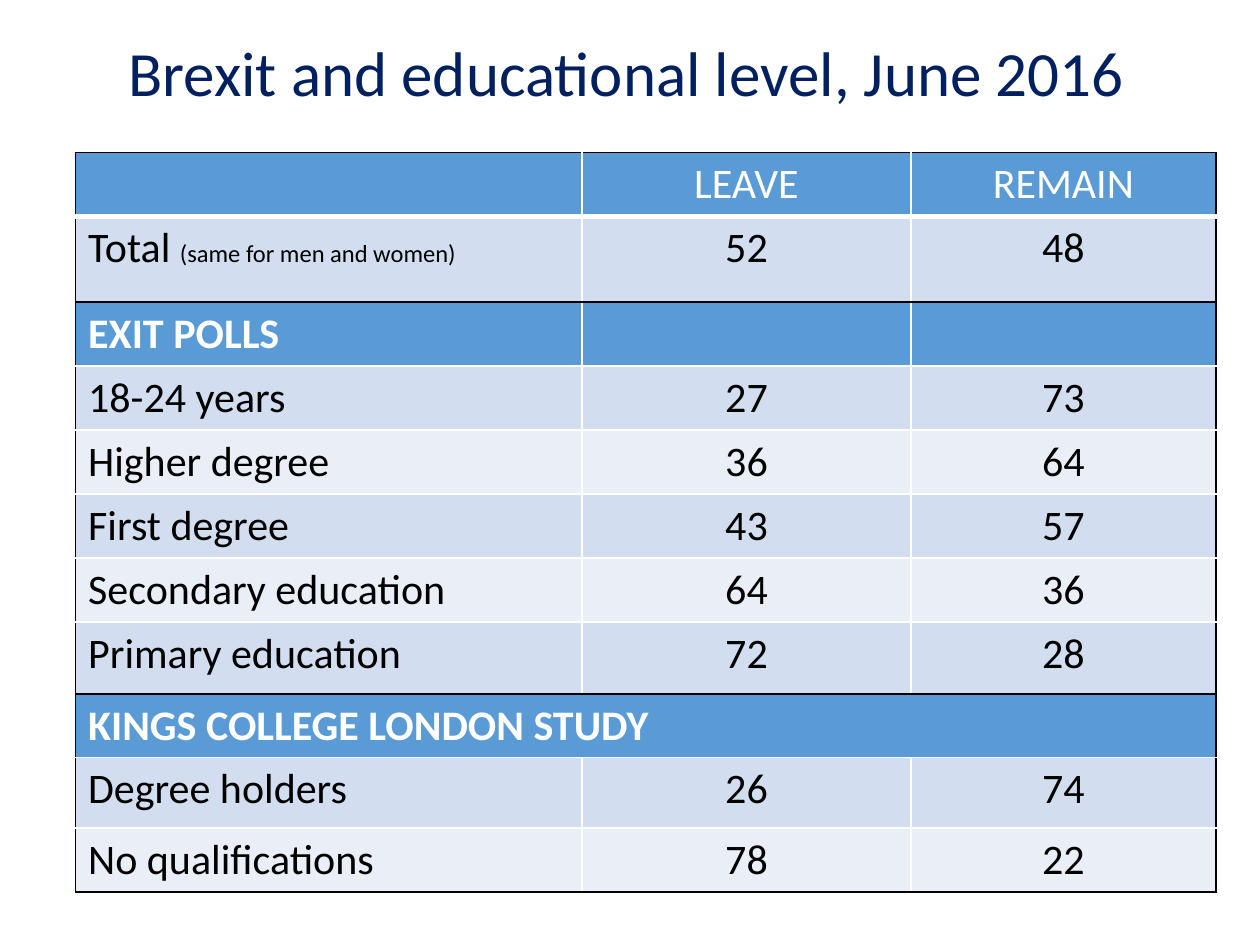
from dataclasses import dataclass

from lxml import etree
from pptx import Presentation
from pptx import util as u
from pptx.dml import color
from pptx.enum import text
from pptx.oxml import ns

Pt = u.Pt


@dataclass(frozen=True)
class Theme:
    font: str = "Calibri"
    title: str = "002060"
    accent: str = "5B9BD5"
    dark_band: str = "D2DEEF"
    light_band: str = "EAEFF7"
    white: str = "FFFFFF"
    black: str = "000000"
    title_size: float = 36
    body_size: float = 24
    note_size: float = 14


@dataclass(frozen=True)
class Box:
    left: float
    top: float
    width: float
    height: float


THEME = Theme()
TITLE_BOX = Box(43.2, 15.8, 629.3, 51.1)
TABLE_BOX = Box(43.2, 87.1, 651.6, 420.5)
COLUMN_SHARES = (4.02, 2.61, 2.42)
ROW_HEIGHTS = (23, 49, 35.3, 36.7, 33.1, 36.7, 36, 41, 33.8, 40.3, 33.1)
NOTE = "(same for men and women)"
ROWS = [
    ("", "LEAVE", "REMAIN"),
    ("Total ", "52", "48"),
    ("EXIT POLLS", "", ""),
    ("18-24 years", "27", "73"),
    ("Higher degree", "36", "64"),
    ("First degree", "43", "57"),
    ("Secondary education", "64", "36"),
    ("Primary education", "72", "28"),
    ("KINGS COLLEGE LONDON STUDY", "", ""),
    ("Degree holders", "26", "74"),
    ("No qualifications", "78", "22"),
]
TOTAL_ROW = 1
SECTION_ROWS = (2, 8)
MERGED_ROW = 8
LAST_ROW = len(ROWS) - 1
LAST_COLUMN = len(COLUMN_SHARES) - 1


def add_span(para, words, size, ink, bold=False):
    span = para.add_run()
    span.text = words
    span.font.name = THEME.font
    span.font.size = Pt(size)
    span.font.bold = bold
    span.font.color.rgb = color.RGBColor.from_string(ink)


def add_border(cell, side, ink, width):
    properties = cell._tc.get_or_add_tcPr()
    line = etree.SubElement(properties, ns.qn(f"a:ln{side}"), w=str(Pt(width)))
    fill = etree.SubElement(line, ns.qn("a:solidFill"))
    etree.SubElement(fill, ns.qn("a:srgbClr"), val=ink)


def draw_borders(cell, row, column):
    outlined = {
        "L": column == 0,
        "R": column == LAST_COLUMN or row == MERGED_ROW,
        "T": row == 0 or row in SECTION_ROWS,
        "B": row == LAST_ROW or row + 1 in SECTION_ROWS,
    }
    for side, is_black in outlined.items():
        width = 3 if row == 0 and side == "B" else 1
        add_border(cell, side, THEME.black if is_black else THEME.white, width)


def fill_cell(cell, row, column, words):
    is_heading = row == 0 or row in SECTION_ROWS
    draw_borders(cell, row, column)
    band = THEME.dark_band if row % 2 else THEME.light_band
    cell.fill.solid()
    cell.fill.fore_color.rgb = color.RGBColor.from_string(
        THEME.accent if is_heading else band)
    para = cell.text_frame.paragraphs[0]
    if column:
        para.alignment = text.PP_ALIGN.CENTER
    if words:
        ink = THEME.white if is_heading else THEME.black
        add_span(para, words, THEME.body_size, ink, row in SECTION_ROWS)
    if row == TOTAL_ROW and column == 0:
        add_span(para, NOTE, THEME.note_size, THEME.black)


def place_title(page, box):
    title = page.shapes.title
    title.left, title.top = Pt(box.left), Pt(box.top)
    title.width, title.height = Pt(box.width), Pt(box.height)
    frame = title.text_frame
    frame.word_wrap = True
    frame.vertical_anchor = text.MSO_ANCHOR.TOP
    para = frame.paragraphs[0]
    para.alignment = text.PP_ALIGN.CENTER
    add_span(para, "Brexit and educational level, June 2016",
             THEME.title_size, THEME.title)


def place_results(page, box):
    holder = page.shapes.add_table(
        len(ROWS), len(COLUMN_SHARES),
        Pt(box.left), Pt(box.top), Pt(box.width), Pt(box.height))
    table = holder.table
    table.first_row = False
    table.horz_banding = False
    for column, share in zip(table.columns, COLUMN_SHARES):
        column.width = Pt(box.width * share / sum(COLUMN_SHARES))
    for row, height in zip(table.rows, ROW_HEIGHTS):
        row.height = Pt(height)
    holder.height = Pt(box.height)
    table.cell(MERGED_ROW, 0).merge(table.cell(MERGED_ROW, LAST_COLUMN))
    for row, entries in enumerate(ROWS):
        for column, words in enumerate(entries):
            fill_cell(table.cell(row, column), row, column, words)


def main():
    deck = Presentation()
    deck.slide_width, deck.slide_height = Pt(720), Pt(540)
    page = deck.slides.add_slide(deck.slide_layouts.get_by_name("Title Only"))
    place_results(page, TABLE_BOX)
    place_title(page, TITLE_BOX)
    deck.save("out.pptx")


if __name__ == "__main__":
    main()
